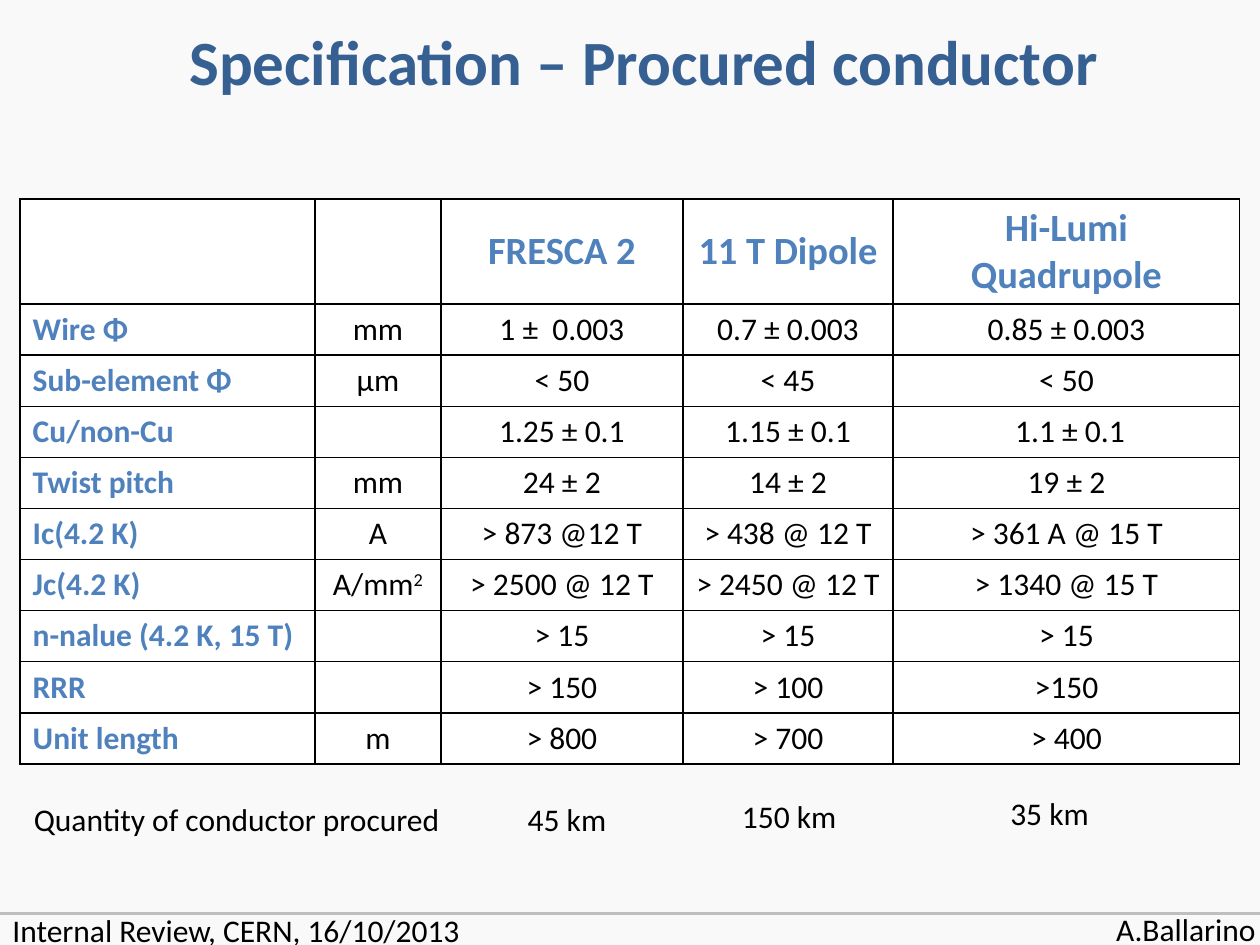
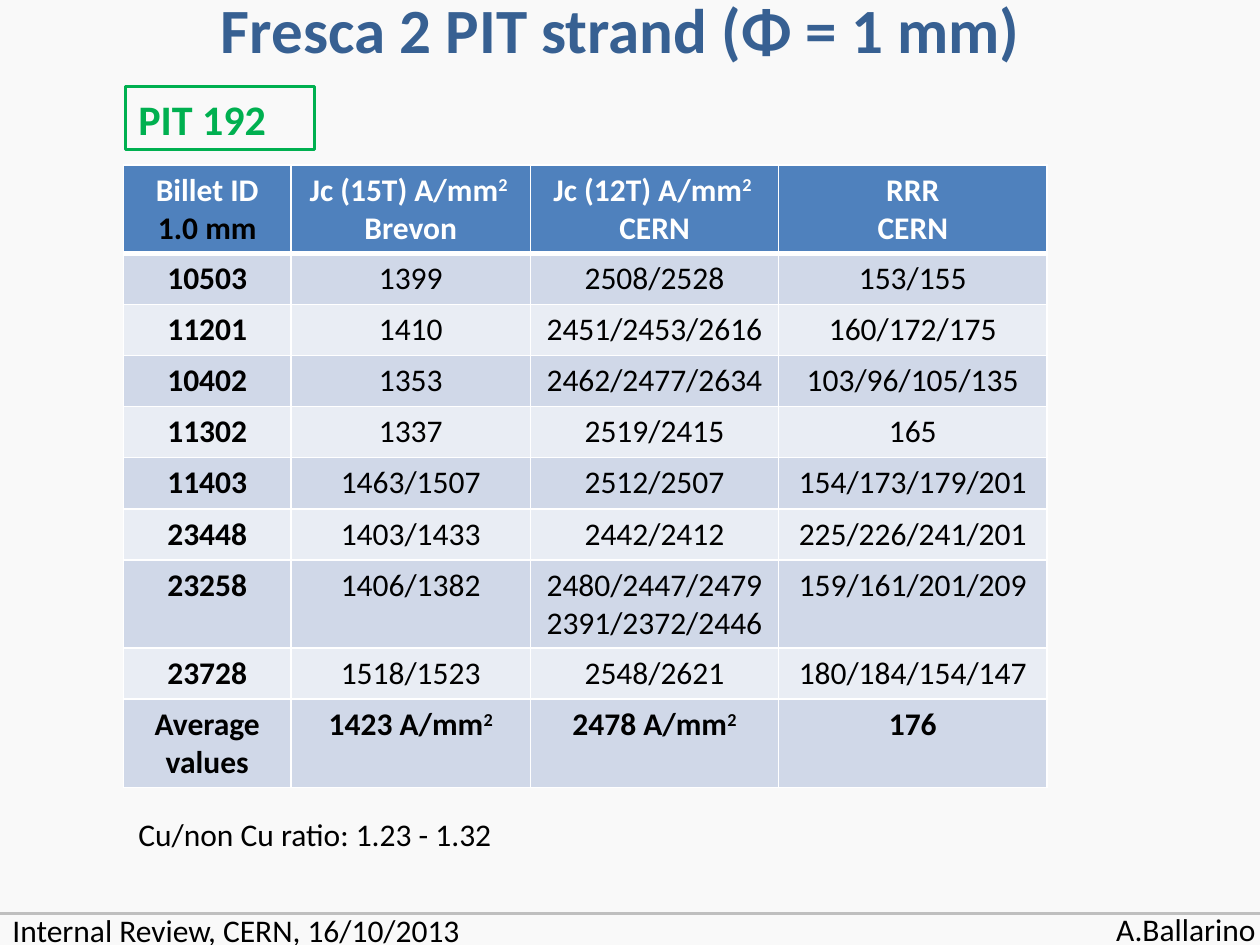
"""Builds two slides on the specification and test results of procured conductor."""
from lxml.etree import SubElement
from pptx import Presentation
from pptx.dml.color import RGBColor
from pptx.enum.shapes import MSO_CONNECTOR, MSO_SHAPE
from pptx.enum.text import MSO_ANCHOR, MSO_AUTO_SIZE, PP_ALIGN
from pptx.oxml.ns import qn
from pptx.util import Inches, Pt

COLORS = {
    "background": "F9F9F9", "rule": "BFBFBF", "title": "376092", "accent": "4F81BD",
    "green": "00B050", "black": "000000", "white": "FFFFFF",
    "band_dark": "D0D8E8", "band_light": "E9EDF4",
}
FONT = "Calibri"
TITLE_ONLY = 5

SPECIFICATION = [
    ("", "", "FRESCA 2", "11 T Dipole", "Hi-Lumi Quadrupole"),
    ("Wire Φ", "mm", "1 ±  0.003", "0.7 ± 0.003", "0.85 ± 0.003"),
    ("Sub-element Φ", "μm", "< 50", "< 45", "< 50"),
    ("Cu/non-Cu", "", "1.25 ± 0.1", "1.15 ± 0.1", " 1.1 ± 0.1"),
    ("Twist pitch", "mm", "24 ± 2", "14 ± 2", "19 ± 2"),
    ("Ic(4.2 K)", "A", "> 873 @12 T", "> 438 @ 12 T", "> 361 A @ 15 T"),
    ("Jc(4.2 K)", "A/mm^2", "> 2500 @ 12 T", "> 2450 @ 12 T", "> 1340 @ 15 T"),
    ("n-nalue (4.2 K, 15 T)", "", "> 15", "> 15", "> 15"),
    ("RRR", "", "> 150", "> 100", ">150"),
    ("Unit length", "m", "> 800", "> 700", "> 400"),
]
QUANTITIES = [
    ("Quantity of conductor procured", 0.17, 6.3, 3.46),
    ("45 km", 4.09, 6.3, 0.83),
    ("150 km", 5.79, 6.28, 0.96),
    ("35 km", 7.92, 6.25, 0.83),
]
BILLETS = [
    ("Billet ID\n1.0 mm", "Jc (15T) A/mm^2 \nBrevon", "Jc (12T) A/mm^2 \nCERN", "RRR\nCERN"),
    ("10503", "1399", "2508/2528", "153/155"),
    ("11201", "1410", "2451/2453/2616", "160/172/175"),
    ("10402", "1353", "2462/2477/2634", "103/96/105/135"),
    ("11302", "1337", "2519/2415", "165"),
    ("11403", "1463/1507", "2512/2507", "154/173/179/201"),
    ("23448", "1403/1433", "2442/2412", "225/226/241/201"),
    ("23258", "1406/1382", "2480/2447/2479\n2391/2372/2446", "159/161/201/209"),
    ("23728", "1518/1523", "2548/2621", "180/184/154/147"),
    ("Average values", "1423 A/mm^2", "2478 A/mm^2", "176"),
]


def rgb(color):
    return RGBColor.from_string(COLORS[color])


class Deck:
    """Holds the shared style and the current slide."""

    def __init__(self):
        self.presentation = Presentation()
        self.presentation.slide_width = Inches(10)
        self.presentation.slide_height = Inches(7.5)
        self.slide = None

    def new_slide(self, title, left, top, width):
        layout = self.presentation.slide_layouts[TITLE_ONLY]
        self.slide = self.presentation.slides.add_slide(layout)
        background = self.slide.background.fill
        background.solid()
        background.fore_color.rgb = rgb("background")
        heading = self.slide.shapes.title
        heading.left, heading.top = Inches(left), Inches(top)
        heading.width, heading.height = Inches(width), Inches(1.61)
        heading.text_frame.vertical_anchor = MSO_ANCHOR.MIDDLE
        self.add_text(heading.text_frame, title, 36, "title", True, PP_ALIGN.CENTER)
        self.footer()

    def footer(self):
        rule = self.slide.shapes.add_connector(
            MSO_CONNECTOR.STRAIGHT, 0, Inches(7.25), Inches(10), Inches(7.25))
        rule.line.color.rgb = rgb("rule")
        rule.line.width = Pt(2)
        SubElement(rule._element.spPr, qn("a:effectLst"))
        self.label("A.Ballarino", 8.76, 7.17, 1.32)
        self.label("Internal Review, CERN, 16/10/2013", 0, 7.18, 3.79)

    def add_text(self, frame, text, size=18, color="black", bold=False, align=PP_ALIGN.LEFT):
        """Adds one paragraph per line; what follows ^ is superscript."""
        for number, line in enumerate(text.split("\n")):
            paragraph = frame.add_paragraph() if number else frame.paragraphs[0]
            paragraph.alignment = align
            base, _, raised = line.partition("^")
            for part in filter(None, (base, raised)):
                run = paragraph.add_run()
                run.text = part
                run.font.name, run.font.size, run.font.bold = FONT, Pt(size), bold
                run.font.color.rgb = rgb(color)
                if part is raised:
                    run._r.get_or_add_rPr().set("baseline", "30000")

    def label(self, text, left, top, width, wrap=False):
        box = self.slide.shapes.add_textbox(Inches(left), Inches(top), Inches(width), Inches(0.4))
        box.text_frame.word_wrap = wrap
        box.text_frame.auto_size = MSO_AUTO_SIZE.SHAPE_TO_FIT_TEXT
        self.add_text(box.text_frame, text)

    def framed_label(self, text, left, top, width, height, color):
        box = self.slide.shapes.add_shape(
            MSO_SHAPE.RECTANGLE, Inches(left), Inches(top), Inches(width), Inches(height))
        box.shadow.inherit = False
        box.fill.background()
        box.line.color.rgb = rgb(color)
        box.line.width = Pt(1.75)
        box.text_frame.vertical_anchor = MSO_ANCHOR.TOP
        self.add_text(box.text_frame, text, 24, color, True)

    def border(self, cell, color, top=1, bottom=1):
        properties = cell._tc.get_or_add_tcPr()
        for side, width in (("L", 1), ("R", 1), ("T", top), ("B", bottom)):
            line = SubElement(properties, qn(f"a:ln{side}"), w=str(Pt(width)))
            fill = SubElement(line, qn("a:solidFill"))
            SubElement(fill, qn("a:srgbClr"), val=COLORS[color])

    def table(self, rows, left, top, columns, height, tall_rows, fills, line, header_rule, style):
        """Adds a table; style(row, column) gives the text format of a cell."""
        grid = self.slide.shapes.add_table(
            len(rows), len(columns), Inches(left), Inches(top),
            Inches(sum(columns)), Inches(height)).table
        for column, width in zip(grid.columns, columns):
            column.width = Inches(width)
        plain_height = (height - sum(tall_rows.values())) / (len(rows) - len(tall_rows))
        for r, texts in enumerate(rows):
            grid.rows[r].height = Inches(tall_rows.get(r, plain_height))
            for c, text in enumerate(texts):
                cell = grid.cell(r, c)
                self.border(cell, line, header_rule if r == 1 else 1, header_rule if r == 0 else 1)
                cell.fill.solid()
                cell.fill.fore_color.rgb = rgb(fills[r])
                self.add_text(cell.text_frame, text, **style(r, c))
        return grid


def specification_style(row, column):
    if row == 0:
        return dict(size=22, color="accent", bold=True, align=PP_ALIGN.CENTER)
    if column == 0:
        return dict(color="accent", bold=True)
    return dict(align=PP_ALIGN.CENTER)


def billet_style(row, column):
    return dict(color="black" if row else "white", align=PP_ALIGN.CENTER,
                bold=column == 0 or row in (0, len(BILLETS) - 1))


def specification_slide(deck):
    deck.new_slide("Specification – Procured conductor", 0.58, -0.33, 9.06)
    grid = deck.table(
        SPECIFICATION, 0.16, 1.58, [2.34, 1, 1.92, 1.67, 2.75], 4.48, {0: 0.83},
        ["white"] * len(SPECIFICATION), "black", 1, specification_style)
    for cell in grid.rows[0].cells:
        cell.vertical_anchor = MSO_ANCHOR.MIDDLE
    for quantity in QUANTITIES:
        deck.label(*quantity)


def strand_slide(deck):
    deck.new_slide("Fresca 2 PIT strand (Φ = 1 mm)", 0.27, -0.58, 9.31)
    bands = [("band_light", "band_dark")[row % 2] for row in range(len(BILLETS))]
    grid = deck.table(
        BILLETS, 0.98, 1.31, [1.33, 1.9, 1.97, 2.13], 4.94, {0: 0.7, 7: 0.7, 9: 0.7},
        ["accent"] + bands[1:], "white", 3, billet_style)
    diameter = grid.cell(0, 0).text_frame.paragraphs[1].runs[0]
    diameter.font.color.rgb = rgb("black")
    deck.label("Cu/non Cu ratio: 1.23 - 1.32", 1, 6.42, 5.12, wrap=True)
    deck.framed_label("PIT 192", 1, 0.69, 1.5, 0.5, "green")


def main():
    deck = Deck()
    specification_slide(deck)
    strand_slide(deck)
    deck.presentation.save("out.pptx")


if __name__ == "__main__":
    main()
